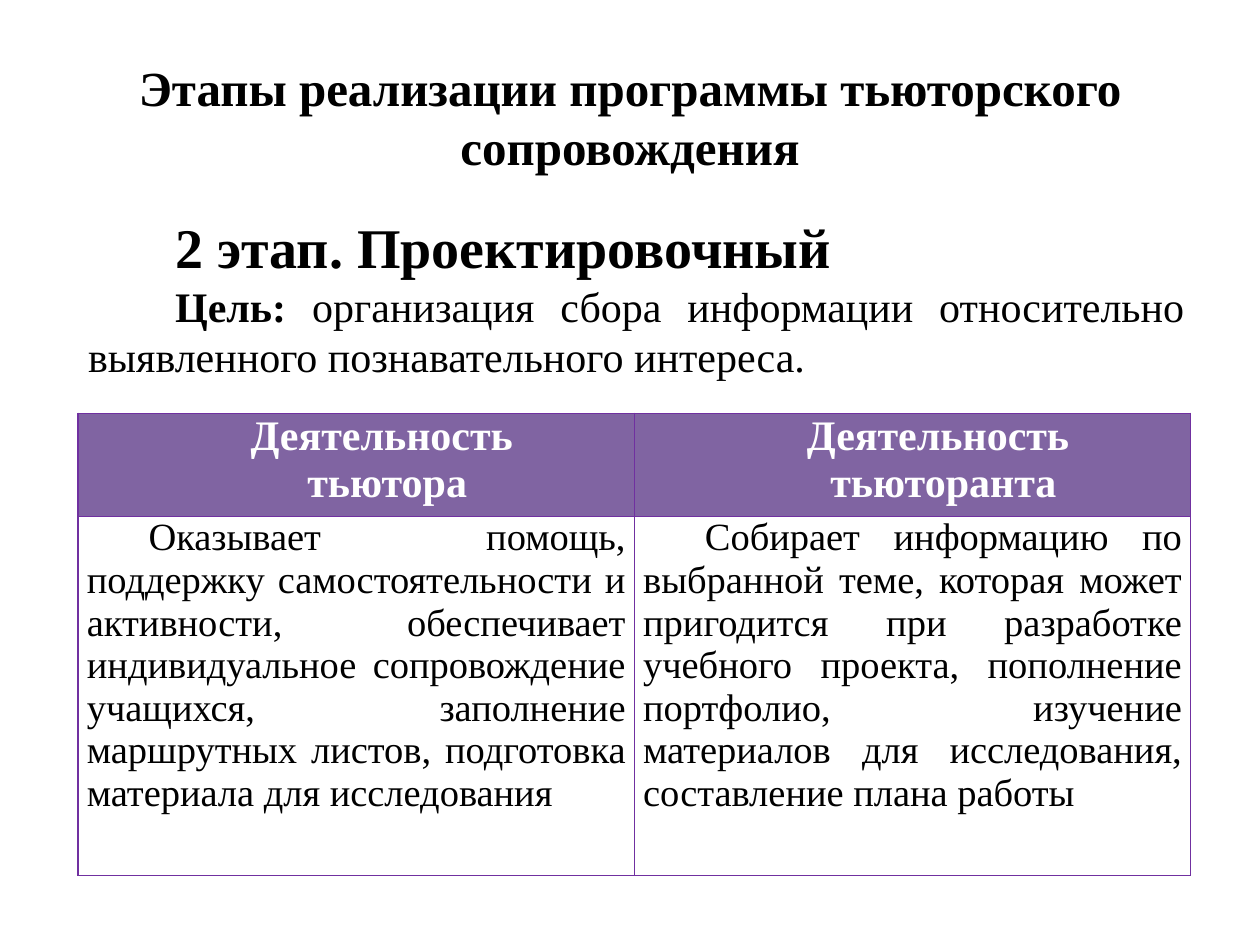
from dataclasses import dataclass

from lxml.etree import SubElement
from pptx import Presentation
from pptx.dml.color import RGBColor
from pptx.enum.text import MSO_ANCHOR, MSO_AUTO_SIZE, PP_ALIGN
from pptx.oxml.ns import qn
from pptx.util import Inches, Pt


@dataclass(frozen=True)
class Theme:
    font: str = "Times New Roman"
    ink: str = "000000"
    paper: str = "FFFFFF"
    header: str = "8064A2"
    border: str = "7030A0"
    title: int = 28
    stage: int = 32
    large: int = 24
    cell: int = 22


def write(frame, paragraphs, *, theme, size, color, bold=False,
          align=PP_ALIGN.LEFT, margin=0, indent=0):
    """Append paragraphs; each is a list of (text, run overrides)."""
    for index, runs in enumerate(paragraphs):
        paragraph = frame.paragraphs[0] if index == 0 else frame.add_paragraph()
        properties = paragraph._p.get_or_add_pPr()
        properties.set("marL", str(Inches(margin)))
        properties.set("indent", str(Inches(indent)))
        SubElement(properties, qn("a:buNone"))
        paragraph.alignment = align
        paragraph.space_before = Pt(0)
        for text, changes in runs:
            run = paragraph.add_run()
            run.text = text
            run.font.name = theme.font
            run.font.size = Pt(changes.get("size", size))
            run.font.bold = changes.get("bold", bold)
            run.font.color.rgb = RGBColor.from_string(color)


class StageSlide:
    def __init__(self, presentation, theme):
        self.theme = theme
        self.slide = presentation.slides.add_slide(presentation.slide_layouts[1])

    def place(self, holder, left, top, width, height):
        holder.left, holder.top = Inches(left), Inches(top)
        holder.width, holder.height = Inches(width), Inches(height)
        holder.text_frame.word_wrap = True
        holder.text_frame.auto_size = MSO_AUTO_SIZE.NONE
        return holder.text_frame

    def title(self, text, box):
        frame = self.place(self.slide.shapes.title, *box)
        frame.vertical_anchor = MSO_ANCHOR.MIDDLE
        write(frame, [[(text, {})]], theme=self.theme, size=self.theme.title,
              color=self.theme.ink, bold=True, align=PP_ALIGN.CENTER)

    def body(self, paragraphs, box):
        frame = self.place(self.slide.placeholders[1], *box)
        write(frame, paragraphs, theme=self.theme, size=self.theme.large,
              color=self.theme.ink, align=PP_ALIGN.JUSTIFY, margin=0.1, indent=0.69)

    def border(self, cell):
        properties = cell._tc.get_or_add_tcPr()
        for side in ("lnL", "lnR", "lnT", "lnB"):
            line = SubElement(properties, qn(f"a:{side}"), w=str(Pt(1)))
            fill = SubElement(line, qn("a:solidFill"))
            SubElement(fill, qn("a:srgbClr"), val=self.theme.border)

    def table(self, headings, activities, left, top, width, row_heights):
        theme = self.theme
        table = self.slide.shapes.add_table(
            2, len(headings), Inches(left), Inches(top),
            Inches(width), Inches(sum(row_heights))).table
        table.horz_banding = False
        for row, height in zip(table.rows, row_heights):
            row.height = Inches(height)

        looks = [
            dict(size=theme.large, color=theme.paper, bold=True, align=PP_ALIGN.CENTER),
            dict(size=theme.cell, color=theme.ink, align=PP_ALIGN.JUSTIFY),
        ]
        fills = [theme.header, theme.paper]
        for row, contents in enumerate((headings, activities)):
            for column, lines in enumerate(contents):
                cell = table.cell(row, column)
                cell.margin_left = cell.margin_right = Inches(0.07)
                cell.margin_top = cell.margin_bottom = 0
                self.border(cell)
                cell.fill.solid()
                cell.fill.fore_color.rgb = RGBColor.from_string(fills[row])
                write(cell.text_frame, [[(line, {})] for line in lines],
                      theme=theme, indent=0.49, **looks[row])


def main():
    presentation = Presentation()
    presentation.slide_width, presentation.slide_height = Inches(10), Inches(7.5)
    theme = Theme()
    stage = StageSlide(presentation, theme)

    # Title
    stage.title("Этапы реализации программы тьюторского сопровождения",
                (0.5, 0.3, 9, 1.25))

    # Stage name and goal
    stage.body([
        [("2 этап. Проектировочный", {"size": theme.stage, "bold": True})],
        [("Цель: ", {"bold": True}),
         ("организация сбора информации относительно выявленного "
          "познавательного интереса.", {})],
    ], (0.5, 1.64, 9, 1.72))

    # Activities of the tutor and the student
    headings = [["Деятельность ", who] for who in ("тьютора", "тьюторанта")]
    activities = [
        ["Оказывает помощь, поддержку самостоятельности и активности, "
         "обеспечивает индивидуальное сопровождение учащихся, заполнение "
         "маршрутных листов, подготовка материала для исследования"],
        ["Собирает информацию по выбранной теме, которая может пригодится "
         "при разработке учебного проекта, пополнение портфолио, изучение "
         "материалов для исследования, составление плана работы"],
    ]
    stage.table(headings, activities, left=0.62, top=3.28, width=8.83,
                row_heights=(0.82, 2.85))

    presentation.save("out.pptx")


if __name__ == "__main__":
    main()
